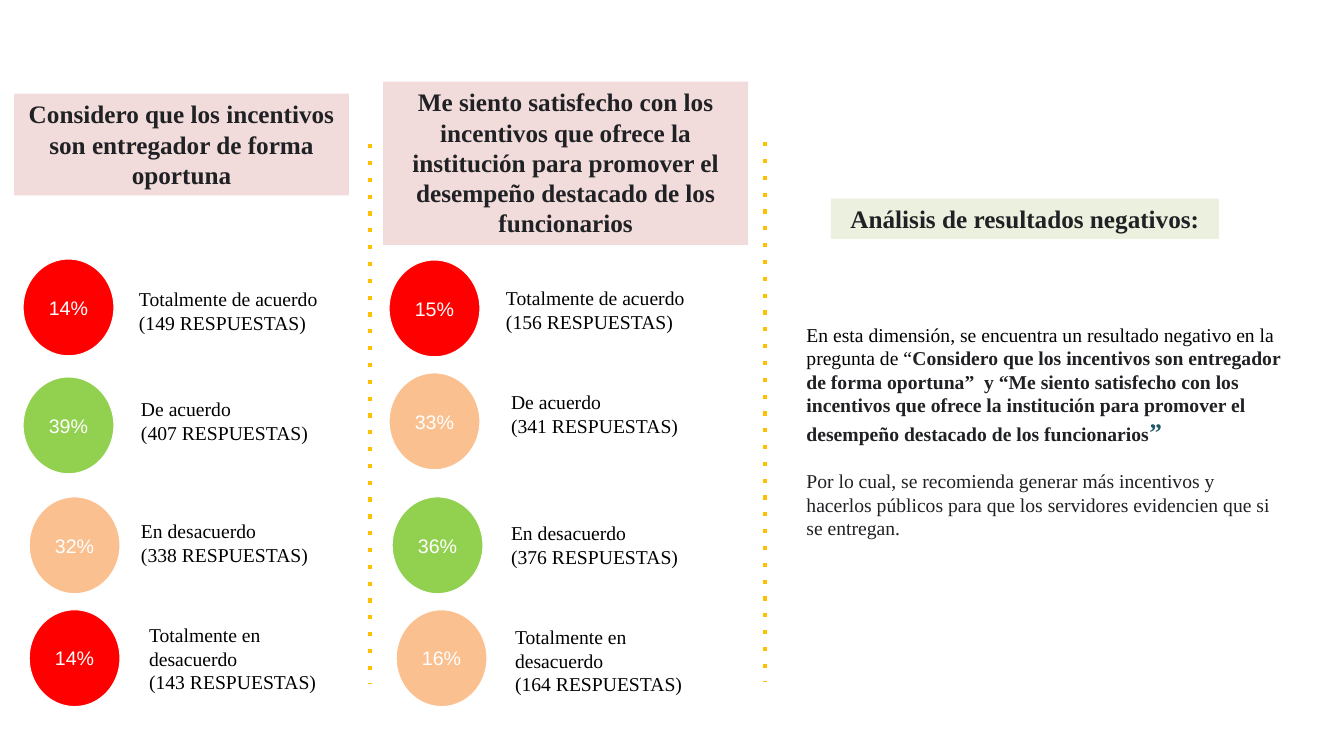
"""Builds the survey slide on how staff rate the incentives."""
from dataclasses import dataclass

from lxml import etree
from pptx import Presentation
from pptx.dml.color import RGBColor
from pptx.enum.shapes import MSO_CONNECTOR, MSO_SHAPE
from pptx.enum.text import MSO_ANCHOR, MSO_AUTO_SIZE, PP_ALIGN
from pptx.oxml.ns import qn
from pptx.util import Emu, Pt

PX = 9144
BLANK_LAYOUT = 6
RECTANGLE, OVAL = MSO_SHAPE.RECTANGLE, MSO_SHAPE.OVAL
STRAIGHT = MSO_CONNECTOR.STRAIGHT
LEFT, CENTER = PP_ALIGN.LEFT, PP_ALIGN.CENTER
TOP, MIDDLE = MSO_ANCHOR.TOP, MSO_ANCHOR.MIDDLE
FIT_SHAPE = MSO_AUTO_SIZE.SHAPE_TO_FIT_TEXT


@dataclass(frozen=True)
class Theme:
    """Colours, fonts and type sizes of the slide."""
    red: str = "FF0000"
    green: str = "92D050"
    peach: str = "FAC090"
    pink: str = "F2DCDB"
    pale_green: str = "EBF1DE"
    gold: str = "FFC000"
    white: str = "FFFFFF"
    black: str = "000000"
    ink: str = "202124"
    teal: str = "205867"
    serif: str = "Times New Roman"
    sans: str = "Arial"
    heading: int = 18
    body: int = 14


class SurveySlide:
    """Draws the elements of one slide in one theme."""

    def __init__(self, slide, theme):
        self.shapes = slide.shapes
        self.theme = theme

    def box(self, *lengths):
        return [Emu(length * PX) for length in lengths]

    def style(self, font, size, color, name=None, bold=False):
        font.size, font.bold = Pt(size), bold
        font.name = name or self.theme.serif
        font.color.rgb = RGBColor.from_string(color)

    def frame(self, shape, pad_y=10, anchor=TOP):
        frame = shape.text_frame
        frame.word_wrap = True
        frame.vertical_anchor = anchor
        frame.margin_left = frame.margin_right = Emu(10 * PX)
        frame.margin_top = frame.margin_bottom = Emu(pad_y * PX)
        return frame

    def filled(self, kind, box, fill):
        shape = self.shapes.add_shape(kind, *self.box(*box))
        shape.shadow.inherit = False
        shape.fill.solid()
        shape.fill.fore_color.rgb = RGBColor.from_string(fill)
        return shape

    def banner(self, text, box, fill):
        banner = self.filled(RECTANGLE, box, fill)
        banner.line.fill.background()
        frame = self.frame(banner, pad_y=5)
        frame.auto_size = FIT_SHAPE
        heading = frame.paragraphs[0]
        heading.text, heading.alignment = text, CENTER
        self.style(heading.font, self.theme.heading, self.theme.ink, bold=True)

    def circle(self, percent, left, top, fill):
        circle = self.filled(OVAL, (left, top, 90, 96), fill)
        circle.line.color.rgb = RGBColor.from_string(self.theme.white)
        circle.line.width = Pt(0.75)
        share = self.frame(circle, anchor=MIDDLE).paragraphs[0]
        share.text, share.alignment = percent, CENTER
        self.style(share.font, self.theme.body, self.theme.white, self.theme.sans)

    def text_box(self, *box):
        frame = self.frame(self.shapes.add_textbox(*self.box(*box)))
        frame.auto_size = FIT_SHAPE
        return frame

    def label(self, answer, count, left, top, height):
        frame = self.text_box(left, top, 218, height)
        frame.text = f"{answer}\n({count} RESPUESTAS)"
        for line in frame.paragraphs:
            line.alignment = LEFT
            self.style(line.font, self.theme.body, self.theme.black)

    def divider(self, x, top, bottom):
        divider = self.shapes.add_connector(STRAIGHT, *self.box(x, top, x, bottom))
        divider.line.color.rgb = RGBColor.from_string(self.theme.gold)
        divider.line.width = Pt(3)
        properties = divider._element.spPr
        etree.SubElement(properties.find(qn("a:ln")), qn("a:prstDash"), val="dot")
        etree.SubElement(properties, qn("a:effectLst"))

    def analysis(self, finding, advice, box):
        frame = self.text_box(*box)
        first = frame.paragraphs[0]
        for text, size, color, bold in finding:
            run = first.add_run()
            run.text = text
            self.style(run.font, size, color, bold=bold)
        second = frame.add_paragraph()
        second.text, second.space_before = advice, Pt(16)
        self.style(second.font, self.theme.body, self.theme.ink)


def main():
    theme = Theme()
    deck = Presentation()
    deck.slide_width, deck.slide_height = Emu(1333 * PX), Emu(750 * PX)
    page = SurveySlide(deck.slides.add_slide(deck.slide_layouts[BLANK_LAYOUT]), theme)

    timely = "Considero que los incentivos son entregador de forma oportuna"
    satisfied = ("Me siento satisfecho con los incentivos que ofrece la institución "
                 "para promover el desempeño destacado de los funcionarios")
    answers = [("Totalmente de acuerdo", 67), ("De acuerdo", 67),
               ("En desacuerdo", 67), ("Totalmente en desacuerdo", 91)]
    questions = [
        (timely, (14, 93, 332, 101), [
            ("14%", theme.red, (23, 257), 149, (128, 275)),
            ("39%", theme.green, (23, 374), 407, (130, 384)),
            ("32%", theme.peach, (29, 493), 338, (130, 505)),
            ("14%", theme.red, (29, 605), 143, (138, 608))]),
        (satisfied, (380, 81, 362, 162), [
            ("15%", theme.red, (386, 258), 156, (492, 274)),
            ("33%", theme.peach, (386, 370), 341, (497, 377)),
            ("36%", theme.green, (389, 493), 376, (497, 507)),
            ("16%", theme.peach, (393, 605), 164, (501, 610))]),
    ]

    page.divider(367, 143, 679)
    page.divider(759, 141, 676)
    for question, banner_box, results in questions:
        page.banner(question, banner_box, theme.pink)
        for (answer, height), result in zip(answers, results):
            percent, fill, circle_at, count, label_at = result
            page.circle(percent, *circle_at, fill)
            page.label(answer, count, *label_at, height)

    page.banner("Análisis de resultados negativos:", (824, 197, 385, 40), theme.pale_green)
    finding = [
        ("En esta dimensión, se encuentra un resultado negativo en la pregunta de “",
         theme.body, theme.black, False),
        (f"{timely}”  y “{satisfied}", theme.body, theme.ink, True),
        ("”", theme.heading, theme.teal, True),
    ]
    advice = ("Por lo cual, se recomienda generar más incentivos y hacerlos públicos "
              "para que los servidores evidencien que si se entregan.")
    page.analysis(finding, advice, (790, 310, 492, 293))
    deck.save("out.pptx")


if __name__ == "__main__":
    main()
